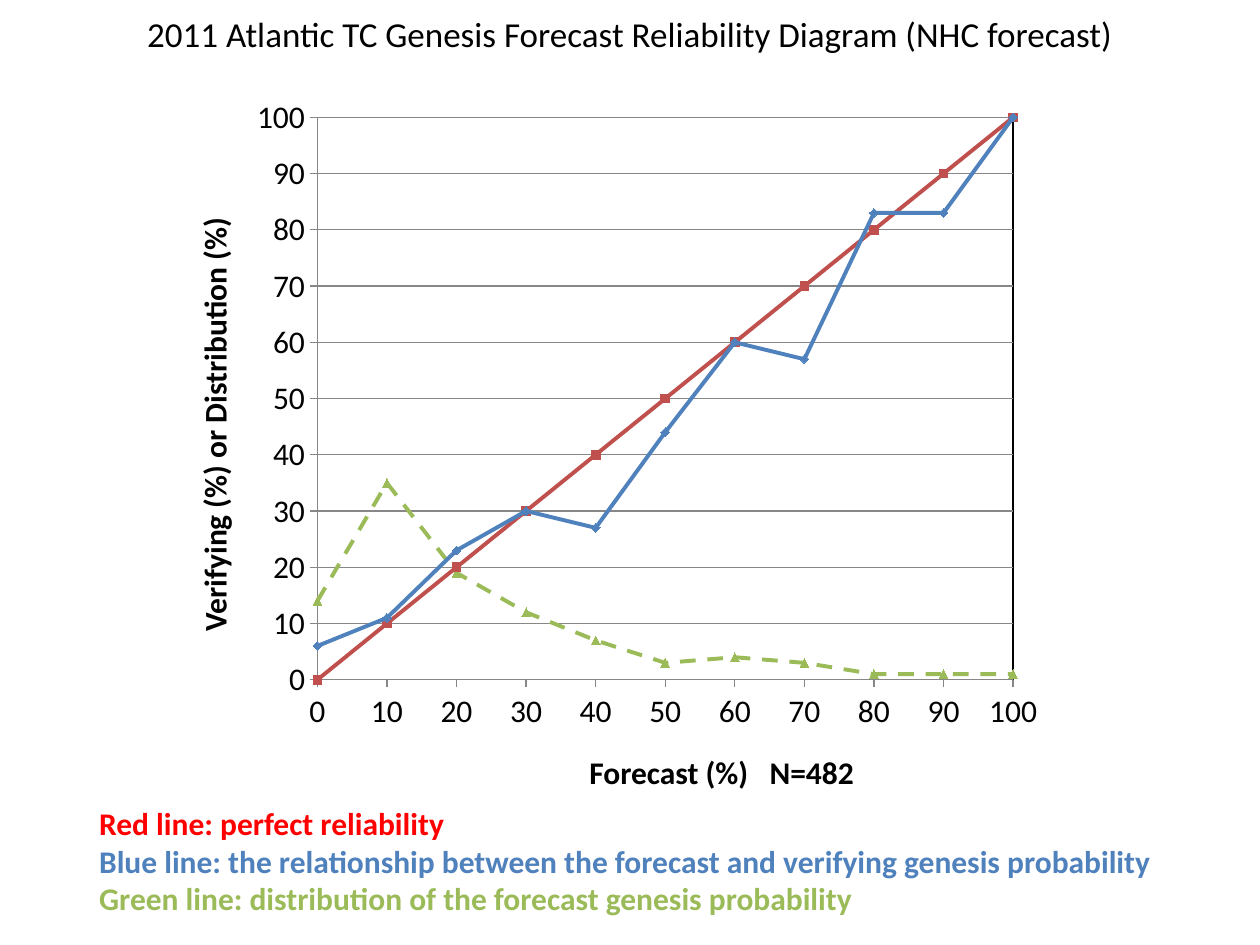
from pptx import Presentation
from pptx.chart.data import XyChartData
from pptx.dml.color import RGBColor
from pptx.enum.chart import XL_CHART_TYPE, XL_LEGEND_POSITION, XL_MARKER_STYLE, XL_TICK_MARK
from pptx.enum.dml import MSO_LINE
from pptx.enum.text import MSO_ANCHOR, PP_ALIGN
from pptx.oxml import parse_xml
from pptx.oxml.ns import nsdecls
from pptx.util import Cm, Pt

FONT = "Calibri"
BLACK, RED, GRID = "000000", "FF0000", "878787"
BLUE_LINE, RED_LINE, GREEN_LINE = "4F81BD", "C0504D", "9BBB59"

FORECAST = range(0, 101, 10)
# name, observed percentages, colour, marker, dash
CURVES = [
    ("Verifying", [6, 11, 23, 30, 27, 44, 60, 57, 83, 83, 100],
     BLUE_LINE, XL_MARKER_STYLE.DIAMOND, MSO_LINE.SOLID),
    ("Perfect", FORECAST, RED_LINE, XL_MARKER_STYLE.SQUARE, MSO_LINE.SOLID),
    ("Distribution", [14, 35, 19, 12, 7, 3, 4, 3, 1, 1, 1],
     GREEN_LINE, XL_MARKER_STYLE.TRIANGLE, MSO_LINE.DASH),
]
KEY = [
    ("Red line: perfect reliability", RED),
    ("Blue line: the relationship between the forecast and verifying genesis probability", BLUE_LINE),
    ("Green line: distribution of the forecast genesis probability", GREEN_LINE),
]


def rgb(value):
    return RGBColor.from_string(value)


def write(paragraph, text, size=18, color=BLACK, bold=True, align=PP_ALIGN.LEFT):
    paragraph.alignment = align
    run = paragraph.add_run()
    run.text = text
    run.font.name, run.font.size, run.font.bold = FONT, Pt(size), bold
    run.font.color.rgb = rgb(color)


def place(shape, left, top, width, height):
    shape.left, shape.top = Cm(left), Cm(top)
    shape.width, shape.height = Cm(width), Cm(height)


def add_title(slide, text):
    title = slide.shapes.title
    place(title, 1.27, 0.1, 22.86, 1.17)
    title.text_frame.vertical_anchor = MSO_ANCHOR.MIDDLE
    write(title.text_frame.paragraphs[0], text, size=20, bold=False, align=PP_ALIGN.CENTER)


def add_label(slide, lines, box, rotation=0, wrap=False):
    label = slide.shapes.add_textbox(*map(Cm, box))
    label.rotation = rotation
    frame = label.text_frame
    frame.word_wrap = wrap
    for index, (text, color) in enumerate(lines):
        paragraph = frame.add_paragraph() if index else frame.paragraphs[0]
        write(paragraph, text, color=color)


def format_axis(axis, gridlines):
    axis.minimum_scale, axis.maximum_scale, axis.major_unit = 0, 100, 10
    axis.major_tick_mark = XL_TICK_MARK.OUTSIDE
    axis.minor_tick_mark = XL_TICK_MARK.NONE
    axis.has_title = False
    axis.has_major_gridlines = gridlines
    axis.tick_labels.number_format = "General"
    axis.tick_labels.number_format_is_linked = False
    lines = [axis.format.line]
    if gridlines:
        lines.append(axis.major_gridlines.format.line)
    for line in lines:
        line.color.rgb = rgb(GRID)
        line.width = Pt(0.75)


def format_curve(curve, color, marker, dash):
    curve.smooth = False
    line = curve.format.line
    line.color.rgb = rgb(color)
    line.width = Pt(2.25)
    line.dash_style = dash
    curve.marker.style, curve.marker.size = marker, 5
    curve.marker.format.fill.solid()
    curve.marker.format.fill.fore_color.rgb = rgb(color)
    curve.marker.format.line.color.rgb = rgb(color)


def frame_plot_area(chart, x, y, w, h):
    """Fix the inner plot area and give it a thin black border."""
    plot_area = chart._chartSpace.chart.plotArea
    for layout in plot_area.xpath("c:layout"):
        plot_area.remove(layout)
    plot_area.insert(0, parse_xml(
        f'<c:layout {nsdecls("c")}><c:manualLayout><c:layoutTarget val="inner"/>'
        f'<c:xMode val="edge"/><c:yMode val="edge"/><c:x val="{x}"/><c:y val="{y}"/>'
        f'<c:w val="{w}"/><c:h val="{h}"/></c:manualLayout></c:layout>'))
    plot_area.append(parse_xml(
        f'<c:spPr {nsdecls("c", "a")}><a:noFill/><a:ln w="9525"><a:solidFill>'
        f'<a:srgbClr val="{BLACK}"/></a:solidFill></a:ln></c:spPr>'))


def add_reliability_chart(slide, box):
    data = XyChartData()
    for name, values, *_ in CURVES:
        points = data.add_series(name)
        for forecast, value in zip(FORECAST, values):
            points.add_data_point(forecast, value)
    chart = slide.shapes.add_chart(XL_CHART_TYPE.XY_SCATTER_LINES, *map(Cm, box), data).chart
    chart.has_title = chart.has_legend = False
    chart.font.name, chart.font.size = FONT, Pt(18)
    chart.font.color.rgb = rgb(BLACK)
    chart.plots[0].vary_by_categories = False
    format_axis(chart.category_axis, gridlines=False)
    format_axis(chart.value_axis, gridlines=True)
    for curve, (_, _, color, marker, dash) in zip(chart.plots[0].series, CURVES):
        format_curve(curve, color, marker, dash)
    frame_plot_area(chart, 0.09, 0.05, 0.86, 0.85)


def main():
    deck = Presentation()
    deck.slide_width, deck.slide_height = Cm(25.4), Cm(19.05)
    slide = deck.slides.add_slide(deck.slide_layouts[5])

    add_title(slide, "2011 Atlantic TC Genesis Forecast Reliability Diagram (NHC forecast)")
    add_reliability_chart(slide, (4.93, 1.7, 16.31, 13.34))

    # Axis captions and the key to the lines
    add_label(slide, [("Forecast (%)   N=482", BLACK)], (11.63, 15.06, 5.92, 1.02), wrap=True)
    add_label(slide, [("Verifying (%) or Distribution (%)", BLACK)],
              (-0.15, 8, 8.94, 1.02), rotation=270)
    add_label(slide, KEY, (1.75, 16.08, 21.87, 2.57))

    deck.save("out.pptx")


if __name__ == "__main__":
    main()
